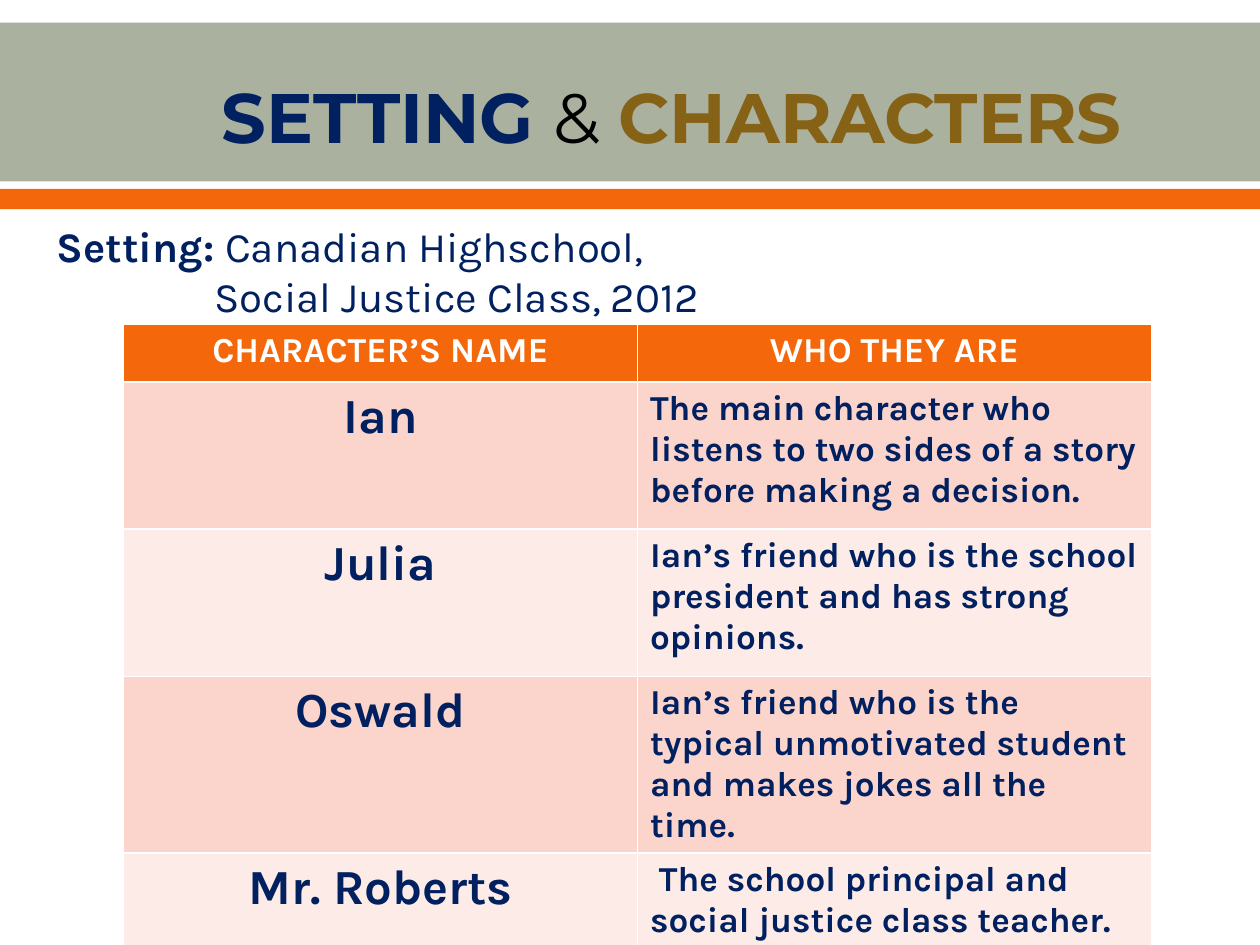
import pptx
import pptx.util
import pptx.dml.color
import pptx.enum.shapes
import pptx.enum.text
import lxml.etree
from pptx.util import Inches

RGBColor = pptx.dml.color.RGBColor
SAGE = RGBColor(0xAB, 0xB1, 0x9F)
ORANGE = RGBColor(0xF4, 0x68, 0x0B)
NAVY = RGBColor(0x00, 0x20, 0x60)
BLACK = RGBColor(0x00, 0x00, 0x00)
BRONZE = RGBColor(0x85, 0x62, 0x15)
WHITE = RGBColor(0xFF, 0xFF, 0xFF)
ROSE = RGBColor(0xFB, 0xD4, 0xCC)
BLUSH = RGBColor(0xFD, 0xEB, 0xE7)
CENTER = pptx.enum.text.PP_ALIGN.CENTER
LEFT = pptx.enum.text.PP_ALIGN.LEFT


def add_text(paragraph, text, size=24, color=NAVY, bold=True, font="Karla", align=LEFT):
    paragraph.alignment = align
    run = paragraph.add_run()
    run.text = text
    run.font.name = font
    run.font.size = pptx.util.Pt(size)
    run.font.bold = bold
    run.font.color.rgb = color


def place(shape, left, top, width, height):
    shape.left, shape.top = Inches(left), Inches(top)
    shape.width, shape.height = Inches(width), Inches(height)


presentation = pptx.Presentation()
presentation.slide_width = Inches(10)
presentation.slide_height = Inches(7.5)
slide = presentation.slides.add_slide(presentation.slide_layouts[1])

for top, height, color in [(0.18, 1.26, SAGE), (1.5, 0.16, ORANGE)]:
    band = slide.shapes.add_shape(
        pptx.enum.shapes.MSO_SHAPE.RECTANGLE, 0, Inches(top), Inches(10), Inches(height)
    )
    band.shadow.inherit = False
    band.fill.solid()
    band.fill.fore_color.rgb = color
    band.line.fill.background()
    slide.shapes._spTree.insert(2, band._element)

title = slide.shapes.title
place(title, 0.83, 0.29, 9, 1.25)
title.text_frame.auto_size = pptx.enum.text.MSO_AUTO_SIZE.NONE
for text, color, bold in [
    ("SETTING ", NAVY, True),
    ("& ", BLACK, False),
    ("CHARACTERS", BRONZE, True),
]:
    add_text(title.text_frame.paragraphs[0], text, size=40, color=color, bold=bold,
             font="Montserrat", align=CENTER)

body = slide.placeholders[1]
place(body, 0.35, 1.7, 9.5, 4.95)
body.text_frame.auto_size = pptx.enum.text.MSO_AUTO_SIZE.NONE
setting = body.text_frame.paragraphs[0]
add_text(setting, "Setting: ")
add_text(setting, "Canadian Highschool,", bold=False)
setting.add_line_break()
add_text(setting, "Social Justice Class, 2012", bold=False)
properties = setting._p.get_or_add_pPr()
properties.set("marL", str(Inches(1.25)))
properties.set("indent", str(-Inches(1.25)))
lxml.etree.SubElement(properties, pptx.oxml.ns.qn("a:buNone"))

characters = [
    ("Ian", "The main character who listens to two sides of a story before making a decision."),
    ("Julia", "Ian’s friend who is the school president and has strong opinions."),
    ("Oswald", "Ian’s friend who is the typical unmotivated student and makes jokes all the time."),
    ("Mr. Roberts", " The school principal and social justice class teacher."),
]
rows = [("CHARACTER’S NAME", "WHO THEY ARE")] + characters
row_heights = [0.46, 1.17, 1.17, 1.17, 0.82]
table = slide.shapes.add_table(
    len(rows), 2, Inches(0.98), Inches(2.57), Inches(8.16), Inches(sum(row_heights))
).table
for row_index, (row, height) in enumerate(zip(rows, row_heights)):
    table.rows[row_index].height = Inches(height)
    header = row_index == 0
    fill = ORANGE if header else (ROSE if row_index % 2 else BLUSH)
    for column_index, text in enumerate(row):
        name = column_index == 0
        cell = table.cell(row_index, column_index)
        cell.fill.solid()
        cell.fill.fore_color.rgb = fill
        add_text(cell.text_frame.paragraphs[0], text,
                 size=28 if name and not header else 20,
                 color=WHITE if header else NAVY,
                 align=CENTER if name or header else LEFT)

presentation.save("out.pptx")
